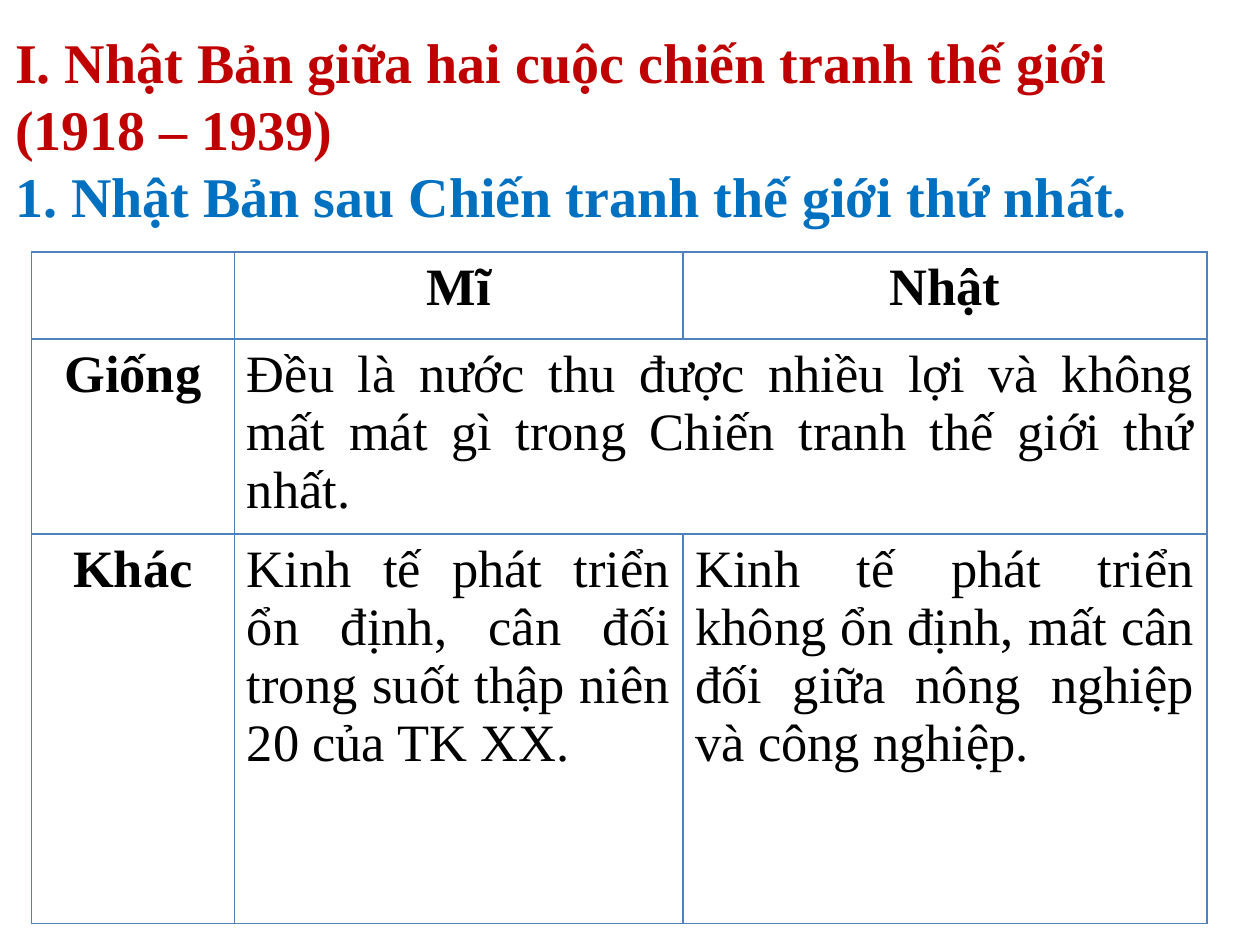
from lxml.etree import SubElement
from pptx import Presentation
from pptx.dml.color import RGBColor
from pptx.enum.text import MSO_ANCHOR, MSO_AUTO_SIZE, PP_ALIGN
from pptx.oxml.ns import qn
from pptx.util import Inches, Pt

RED = RGBColor(0xC0, 0x00, 0x00)
BLUE = RGBColor(0x00, 0x70, 0xC0)
BLACK = RGBColor(0x00, 0x00, 0x00)
WHITE = RGBColor(0xFF, 0xFF, 0xFF)
BORDER = RGBColor(0x4F, 0x81, 0xBD)
FONT = "Times New Roman"

TITLE = [
    ("I. Nhật Bản giữa hai cuộc chiến tranh thế giới (1918 – 1939)", RED),
    ("1. Nhật Bản sau Chiến tranh thế giới thứ nhất.", BLUE),
]
COL_WIDTHS = [1.61, 3.56, 4.16]
ROW_HEIGHTS = [0.69, 1.55, 3.09]
# None marks a cell covered by the merged cell to its left
ROWS = [
    ["", "Mĩ", "Nhật"],
    ["Giống", "Đều là nước thu được nhiều lợi và không mất mát gì trong "
              "Chiến tranh thế giới thứ nhất.", None],
    ["Khác", "Kinh tế phát triển ổn định, cân đối trong suốt thập niên 20 của TK XX.",
     "Kinh tế phát triển không ổn định, mất cân đối giữa nông nghiệp và công nghiệp."],
]


def write(p, text, size=30, color=BLACK, bold=False, align=PP_ALIGN.LEFT):
    p.alignment = align
    r = p.add_run()
    r.text = text
    r.font.name = FONT
    r.font.size = Pt(size)
    r.font.bold = bold
    r.font.color.rgb = color


def set_borders(cell, color=BORDER, width=1):
    tcPr = cell._tc.get_or_add_tcPr()
    for i, side in enumerate(("a:lnL", "a:lnR", "a:lnT", "a:lnB")):
        ln = tcPr.makeelement(qn(side), {"w": str(Pt(width))})
        fill = SubElement(ln, qn("a:solidFill"))
        SubElement(fill, qn("a:srgbClr"), val=str(color))
        tcPr.insert(i, ln)  # borders come before the cell fill


def add_title(slide):
    sp = slide.shapes.title
    sp.left, sp.top, sp.width, sp.height = map(Inches, (0.02, 0.33, 10, 1.25))
    tf = sp.text_frame
    tf.word_wrap = True
    tf.auto_size = MSO_AUTO_SIZE.NONE
    tf.vertical_anchor = MSO_ANCHOR.MIDDLE
    tf.margin_top = Inches(0.17)
    for i, (text, color) in enumerate(TITLE):
        p = tf.add_paragraph() if i else tf.paragraphs[0]
        p.space_before = Pt(0)
        write(p, text, size=32, color=color, bold=True)


def add_comparison_table(slide):
    table = slide.shapes.add_table(
        len(ROWS), len(COL_WIDTHS), Inches(0.25), Inches(2),
        Inches(sum(COL_WIDTHS)), Inches(sum(ROW_HEIGHTS))).table
    for col, width in zip(table.columns, COL_WIDTHS):
        col.width = Inches(width)
    for row, height in zip(table.rows, ROW_HEIGHTS):
        row.height = Inches(height)
    table.cell(1, 1).merge(table.cell(1, 2))

    for i, row in enumerate(ROWS):
        for j, text in enumerate(row):
            cell = table.cell(i, j)
            cell.fill.solid()
            cell.fill.fore_color.rgb = WHITE
            set_borders(cell)
            if text:
                header = i == 0 or j == 0
                write(cell.text_frame.paragraphs[0], text, bold=header,
                      align=PP_ALIGN.CENTER if header else PP_ALIGN.JUSTIFY)


def main():
    prs = Presentation()
    prs.slide_width, prs.slide_height = Inches(10), Inches(7.5)
    slide = prs.slides.add_slide(prs.slide_layouts[5])  # title only
    add_title(slide)
    add_comparison_table(slide)
    prs.save("out.pptx")


if __name__ == "__main__":
    main()
